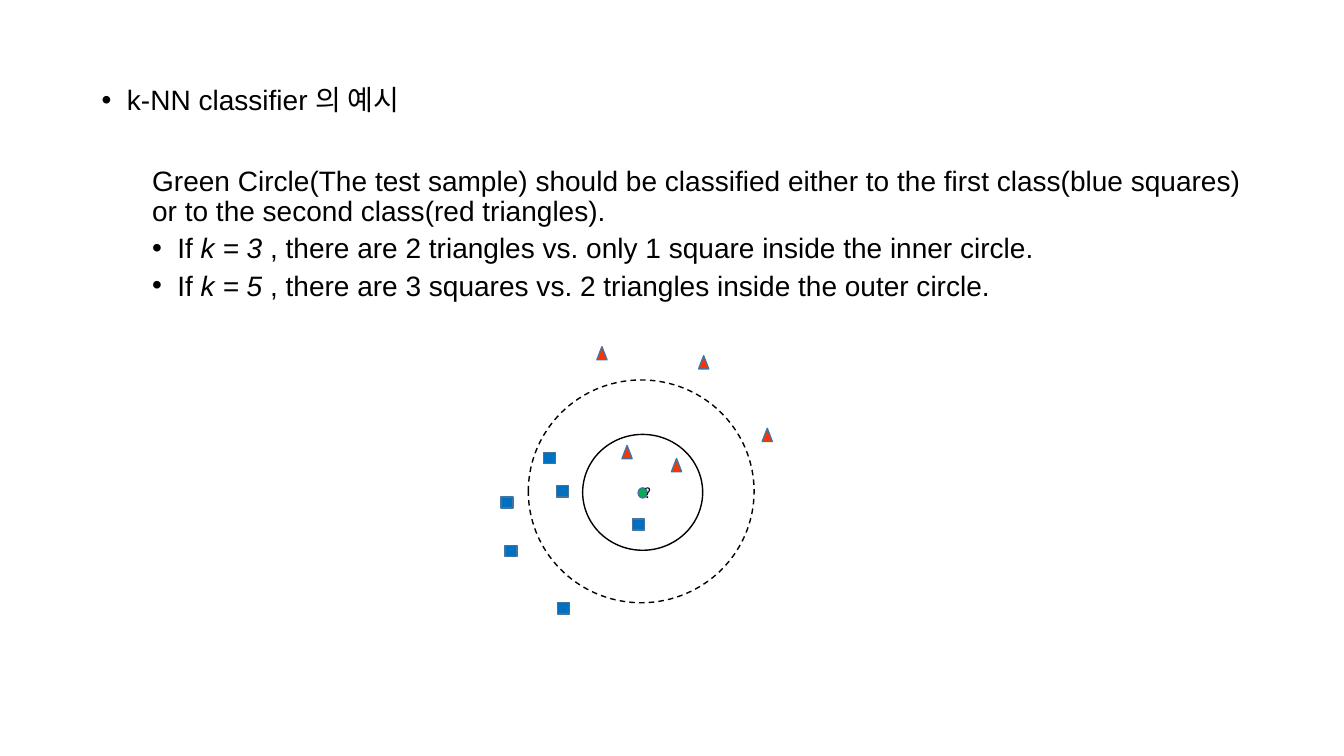
from lxml import etree
from pptx import Presentation
from pptx import util as u
from pptx.dml.color import RGBColor
from pptx.enum import dml, shapes, text
from pptx.oxml import ns

SLIDE_W, SLIDE_H = u.Inches(13.33), u.Inches(7.5)
COLORS = {"ink": "000000", "edge": "43739E", "sample": "00B050",
          "triangle": "FF3300", "square": "0070C0"}
LATIN, KOREAN = "Arial", "Noto Sans CJK KR"

TRIANGLES = [(46.66, 59.8), (50.34, 61.53), (57.09, 57.53),
             (52.36, 47.93), (44.79, 46.73)]
SQUARES = [(37.73, 66.47), (38.03, 72.87), (41.94, 80.47),
           (40.89, 60.6), (47.49, 69.4), (41.86, 65)]


def across(percent):
    """Turn a percentage of the slide width into a length."""
    return round(SLIDE_W * percent / 100)


def down(percent):
    """Turn a percentage of the slide height into a length."""
    return round(SLIDE_H * percent / 100)


def centred(center, size):
    """Return left, top, width and height around a center, all in percent."""
    (x, y), (w, h) = center, size
    return across(x - w / 2), down(y - h / 2), across(w), down(h)


def add_marker(diagram, kind, center, size, fill=None, edge="edge", dash=None):
    """Draw one preset shape of the diagram around its center."""
    marker = diagram.shapes.add_shape(kind, *centred(center, size))
    marker.shadow.inherit = False
    if fill:
        marker.fill.solid()
        marker.fill.fore_color.rgb = RGBColor.from_string(COLORS[fill])
    else:
        marker.fill.background()
    marker.line.color.rgb = RGBColor.from_string(COLORS[edge])
    marker.line.width = u.Pt(1)
    if dash:
        marker.line.dash_style = dash


def add_run(paragraph, wording, size=20, font=LATIN, italic=False, color="ink"):
    """Add formatted text to a paragraph."""
    run = paragraph.add_run()
    run.text = wording
    run.font.size = u.Pt(size)
    run.font.name = font
    run.font.italic = italic
    run.font.color.rgb = RGBColor.from_string(COLORS[color])
    east_asian = etree.SubElement(run.font._element, ns.qn("a:ea"))
    east_asian.set("typeface", KOREAN)


def set_layout(paragraph, margin, bullet=True, before=5, level=0,
               align=text.PP_ALIGN.JUSTIFY):
    """Set the spacing, indent and bullet of a paragraph."""
    paragraph.level = level
    paragraph.alignment = align
    paragraph.line_spacing = 0.9
    paragraph.space_before = u.Pt(before)
    properties = paragraph._p.get_or_add_pPr()
    properties.set("marL", str(u.Inches(margin)))
    properties.set("indent", str(u.Inches(-0.25 if bullet else 0)))
    if bullet:
        font = etree.SubElement(properties, ns.qn("a:buFont"))
        font.set("typeface", LATIN)
        etree.SubElement(properties, ns.qn("a:buChar")).set("char", "•")
    else:
        etree.SubElement(properties, ns.qn("a:buNone"))


def add_explanation(slide):
    """Write the heading, the task and the two cases."""
    box = slide.shapes.add_textbox(across(6.83), down(10.8),
                                   across(86.27), down(73.73))
    frame = box.text_frame
    frame.word_wrap = True

    heading = frame.paragraphs[0]
    set_layout(heading, 0.25, before=0, align=text.PP_ALIGN.LEFT)
    add_run(heading, "k-NN classifier 의 예시")

    task = frame.add_paragraph()
    set_layout(task, 0.5, bullet=False, before=36, level=1)
    add_run(task, "Green Circle(The test sample) should be classified either to "
                  "the first class(blue squares) or to the second class(red triangles). ")

    for neighbours, outcome in [
        ("k = 3 ", ", there are 2 triangles vs. only 1 square inside the inner circle. "),
        ("k = 5 ", ", there are 3 squares vs. 2 triangles inside the outer circle."),
    ]:
        case = frame.add_paragraph()
        set_layout(case, 0.75, level=1)
        add_run(case, "If ")
        add_run(case, neighbours, italic=True)
        add_run(case, outcome)


def add_question(diagram, center, size):
    """Place the question mark beside the test sample."""
    frame = diagram.shapes.add_textbox(*centred(center, size)).text_frame
    frame.margin_left = frame.margin_right = 0
    frame.margin_top = frame.margin_bottom = 0
    frame.word_wrap = False
    frame.vertical_anchor = text.MSO_ANCHOR.MIDDLE
    question = frame.paragraphs[0]
    question.alignment = text.PP_ALIGN.CENTER
    add_run(question, "?", size=10, font=KOREAN)


def add_diagram(slide):
    """Draw the neighbourhoods, the test sample and both classes."""
    diagram = slide.shapes.add_group_shape()
    kinds = shapes.MSO_SHAPE
    add_marker(diagram, kinds.OVAL, (47.82, 65.13), (8.93, 15.33), edge="ink")
    add_marker(diagram, kinds.OVAL, (47.71, 65), (16.8, 29.47), edge="ink",
               dash=dml.MSO_LINE.DASH)
    add_marker(diagram, kinds.OVAL, (47.82, 65.2), (0.68, 1.33), fill="sample")
    add_question(diagram, (48.2, 65.27), (0.68, 3.6))
    for center in TRIANGLES:
        add_marker(diagram, kinds.ISOSCELES_TRIANGLE, center, (0.75, 1.73),
                   fill="triangle")
    for center in SQUARES:
        add_marker(diagram, kinds.RECTANGLE, center, (0.9, 1.47), fill="square")


def main():
    """Build and save the slide."""
    deck = Presentation()
    deck.slide_width, deck.slide_height = SLIDE_W, SLIDE_H
    slide = deck.slides.add_slide(deck.slide_layouts[6])
    add_explanation(slide)
    add_diagram(slide)
    deck.save("out.pptx")


if __name__ == "__main__":
    main()
